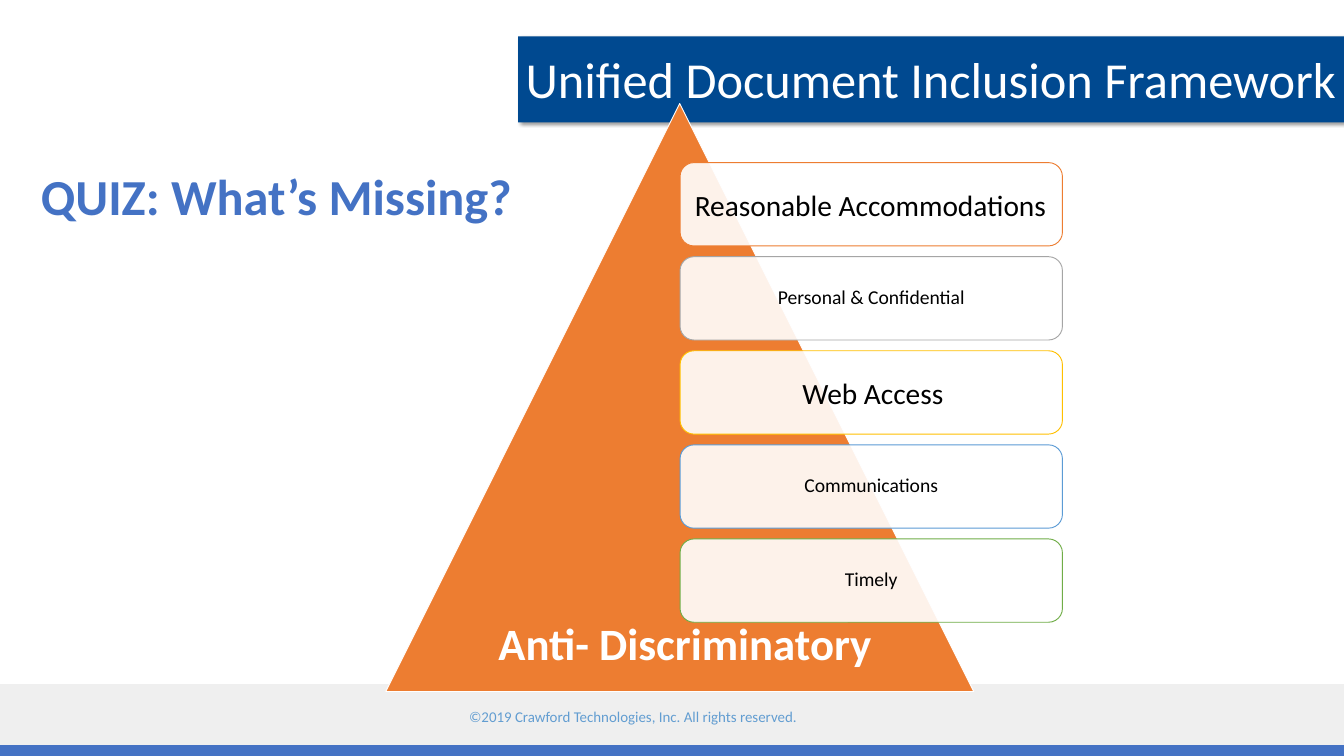
import pptx
import pptx.dml.color
import pptx.enum.shapes
import pptx.enum.text
import pptx.oxml
import pptx.oxml.ns
import pptx.util

Inches = pptx.util.Inches
Pt = pptx.util.Pt
SHAPE = pptx.enum.shapes.MSO_SHAPE
ALIGN = pptx.enum.text.PP_ALIGN
ANCHOR = pptx.enum.text.MSO_ANCHOR

COLORS = {
    "white": "FFFFFF", "black": "000000", "navy": "004990", "blue": "4472C4",
    "gray": "D9D9D9", "orange": "ED7D31", "silver": "A5A5A5", "gold": "FFC000",
    "sky": "5B9BD5", "green": "70AD47", "footer": "629DD1",
}


def add_shape(kind, left, top, width, height, fill, line=None, opacity=100):
    shape = page.shapes.add_shape(
        kind, Inches(left), Inches(top), Inches(width), Inches(height))
    shape.shadow.inherit = False
    shape.fill.solid()
    shape.fill.fore_color.rgb = pptx.dml.color.RGBColor.from_string(COLORS[fill])
    if opacity < 100:
        color = shape.fill._xPr.find(".//" + pptx.oxml.ns.qn("a:srgbClr"))
        alpha = color.makeelement(pptx.oxml.ns.qn("a:alpha"), {"val": str(opacity * 1000)})
        color.append(alpha)
    if line:
        shape.line.color.rgb = pptx.dml.color.RGBColor.from_string(COLORS[line])
        shape.line.width = Pt(1)
    else:
        shape.line.fill.background()
    return shape


def add_text(text, left, top, width, height, size, color, bold=False,
             align=ALIGN.LEFT, anchor=ANCHOR.TOP, spacing=1.0):
    box = page.shapes.add_textbox(
        Inches(left), Inches(top), Inches(width), Inches(height))
    frame = box.text_frame
    frame.word_wrap = True
    frame.vertical_anchor = anchor
    para = frame.paragraphs[0]
    para.alignment = align
    para.line_spacing = spacing
    span = para.add_run()
    span.text = text
    span.font.name = "Calibri"
    span.font.size = Pt(size)
    span.font.bold = bold
    span.font.color.rgb = pptx.dml.color.RGBColor.from_string(COLORS[color])


deck = pptx.Presentation()
deck.slide_width = Inches(20)
deck.slide_height = Inches(11.25)
page = deck.slides.add_slide(deck.slide_layouts[6])

# Banner with a soft shadow
banner = add_shape(SHAPE.RECTANGLE, 7.71, 0.54, 12.29, 1.28, "navy")
effects = banner._element.spPr.find(pptx.oxml.ns.qn("a:effectLst"))
effects.append(pptx.oxml.parse_xml(
    f'<a:outerShdw {pptx.oxml.ns.nsdecls("a")} blurRad="{Pt(4)}" dist="{Pt(3)}" '
    'dir="2700000" algn="tl" rotWithShape="0">'
    '<a:srgbClr val="000000"><a:alpha val="40000"/></a:srgbClr></a:outerShdw>'))
add_text("Unified Document Inclusion Framework", 7.71, 0.66, 12.29, 1.01,
         size=54, color="white", align=ALIGN.CENTER)

# Footer
add_shape(SHAPE.RECTANGLE, 0, 10.18, 20, 1.07, "gray", opacity=40)
add_shape(SHAPE.RECTANGLE, 0, 11.09, 20, 0.16, "blue")
add_text("©2019 Crawford Technologies, Inc. All rights reserved.", 5.96, 10.53, 6.92, 0.32,
         size=16, color="footer", align=ALIGN.CENTER, spacing=0.8)

# Title
add_text("QUIZ: What’s Missing?", 0.51, 2.51, 14, 1.15,
         size=54, color="blue", bold=True, spacing=0.9)

# Pyramid
add_shape(SHAPE.ISOSCELES_TRIANGLE, 5.74, 1.54, 8.75, 8.75, "orange", line="white")

# Cards, evenly spaced; the two quiz answers are laid over theirs below
cards = [
    (None, "orange"),
    ("Personal & Confidential", "silver"),
    (None, "gold"),
    ("Communications", "sky"),
    ("Timely", "green"),
]
for index, (label, outline) in enumerate(cards):
    top = 2.42 + 1.4 * index
    add_shape(SHAPE.ROUNDED_RECTANGLE, 10.12, top, 5.69, 1.24, "white",
              line=outline, opacity=90)
    if label:
        add_text(label, 10.18, top + 0.06, 5.57, 1.12, size=21, color="black",
                 align=ALIGN.CENTER, anchor=ANCHOR.MIDDLE, spacing=0.9)

# Pyramid base label
add_text("Anti- Discriminatory", 7.15, 9.21, 6.09, 1.08, size=48, color="white",
         bold=True, align=ALIGN.CENTER, spacing=0.9)

# Quiz answers
add_text("Reasonable Accommodations", 10.24, 2.74, 5.62, 0.63, size=31.5, color="black")
add_text("Web Access", 11.84, 5.53, 2.41, 0.63, size=31.5, color="black")

deck.save("out.pptx")
